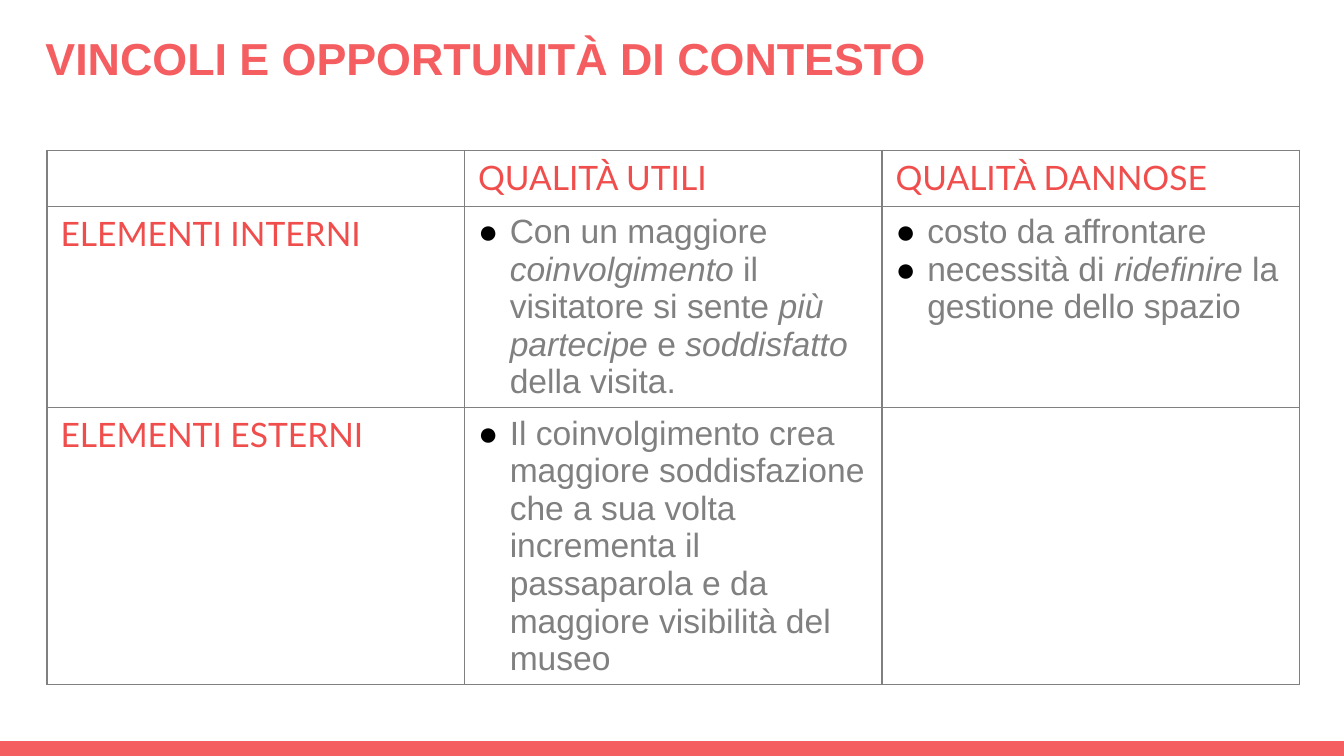
from lxml.etree import SubElement
from pptx import Presentation
from pptx.dml.color import RGBColor
from pptx.enum.shapes import MSO_SHAPE
from pptx.enum.text import MSO_ANCHOR
from pptx.oxml.ns import qn
from pptx.util import Cm, Pt

CORAL = RGBColor(0xF5, 0x5E, 0x61)
RED = RGBColor(0xF0, 0x4E, 0x4D)
GRAY = RGBColor(0x80, 0x80, 0x80)
BLACK = RGBColor(0, 0, 0)
WHITE = RGBColor(0xFF, 0xFF, 0xFF)

TITLE = "VINCOLI E OPPORTUNITÀ DI CONTESTO"
COLUMN_HEADS = ["QUALITÀ UTILI", "QUALITÀ DANNOSE"]
ROW_HEADS = ["ELEMENTI INTERNI", "ELEMENTI ESTERNI"]
# Each cell is a list of bullets, each bullet a list of (text, italic) runs.
POINTS = [
    [
        [[("Con un maggiore ", False), ("coinvolgimento", True),
          (" il visitatore si sente", False), (" più partecipe", True),
          (" e ", False), ("soddisfatto", True), (" della visita.", False)]],
        [[("costo da affrontare", False)],
         [("necessità di ", False), ("ridefinire", True),
          (" la gestione dello spazio", False)]],
    ],
    [
        [[("Il coinvolgimento crea maggiore soddisfazione che a sua volta "
           "incrementa il passaparola e da maggiore visibilità del museo", False)]],
        [],
    ],
]

WIDTH, HEIGHT = Cm(25.4), Cm(14.29)
BAR_HEIGHT = Cm(0.28)
COLUMN_WIDTH = Cm(7.89)
ROW_HEIGHTS = [Cm(1.06), Cm(3.81), Cm(5.23)]
INDENT = Cm(0.6)


def add_run(p, text, size, font, color, bold=False, italic=False):
    r = p.add_run()
    r.text = text
    r.font.size, r.font.name = Pt(size), font
    r.font.bold, r.font.italic = bold, italic
    r.font.color.rgb = color


def add_bullet(p):
    pPr = p._p.get_or_add_pPr()
    pPr.set("marL", str(INDENT))
    pPr.set("indent", str(-INDENT))
    color = SubElement(pPr, qn("a:buClr"))
    SubElement(color, qn("a:srgbClr"), val=str(BLACK))
    SubElement(pPr, qn("a:buFont"), typeface="Arial")
    SubElement(pPr, qn("a:buChar"), char="●")


def style_cell(cell):
    tcPr = cell._tc.get_or_add_tcPr()
    for side in ("lnL", "lnR", "lnT", "lnB"):
        line = SubElement(tcPr, qn(f"a:{side}"), w=str(Pt(0.75)))
        fill = SubElement(line, qn("a:solidFill"))
        SubElement(fill, qn("a:srgbClr"), val=str(GRAY))
    cell.fill.solid()
    cell.fill.fore_color.rgb = WHITE


def fill_points(cell, points):
    tf = cell.text_frame
    for i, runs in enumerate(points):
        p = tf.add_paragraph() if i else tf.paragraphs[0]
        add_bullet(p)
        for text, italic in runs:
            add_run(p, text, 18, "Arial", GRAY, italic=italic)


prs = Presentation()
prs.slide_width, prs.slide_height = WIDTH, HEIGHT
s = prs.slides.add_slide(prs.slide_layouts[6])

bar = s.shapes.add_shape(MSO_SHAPE.RECTANGLE, 0, HEIGHT - BAR_HEIGHT, WIDTH, BAR_HEIGHT)
bar.shadow.inherit = False
bar.fill.solid()
bar.fill.fore_color.rgb = CORAL
bar.line.fill.background()

table = s.shapes.add_table(3, 3, Cm(0.89), Cm(2.84), 3 * COLUMN_WIDTH, sum(ROW_HEIGHTS)).table
table.first_row = table.horz_banding = False
for column in table.columns:
    column.width = COLUMN_WIDTH
for row, height in zip(table.rows, ROW_HEIGHTS):
    row.height = height
for cell in table.iter_cells():
    style_cell(cell)

heads = [(0, c, text) for c, text in enumerate(COLUMN_HEADS, 1)]
heads += [(r, 0, text) for r, text in enumerate(ROW_HEADS, 1)]
for r, c, text in heads:
    add_run(table.cell(r, c).text_frame.paragraphs[0], text, 18, "Lato", RED)
for r, row in enumerate(POINTS, 1):
    for c, points in enumerate(row, 1):
        fill_points(table.cell(r, c), points)

title = s.shapes.add_textbox(Cm(0.61), Cm(0.61), Cm(23.19), Cm(0.97))
tf = title.text_frame
tf.word_wrap = True
tf.vertical_anchor = MSO_ANCHOR.MIDDLE
tf.margin_left = tf.margin_right = tf.margin_top = tf.margin_bottom = Cm(0.25)
add_run(tf.paragraphs[0], TITLE, 24, "Arial", CORAL, bold=True)

prs.save("out.pptx")
